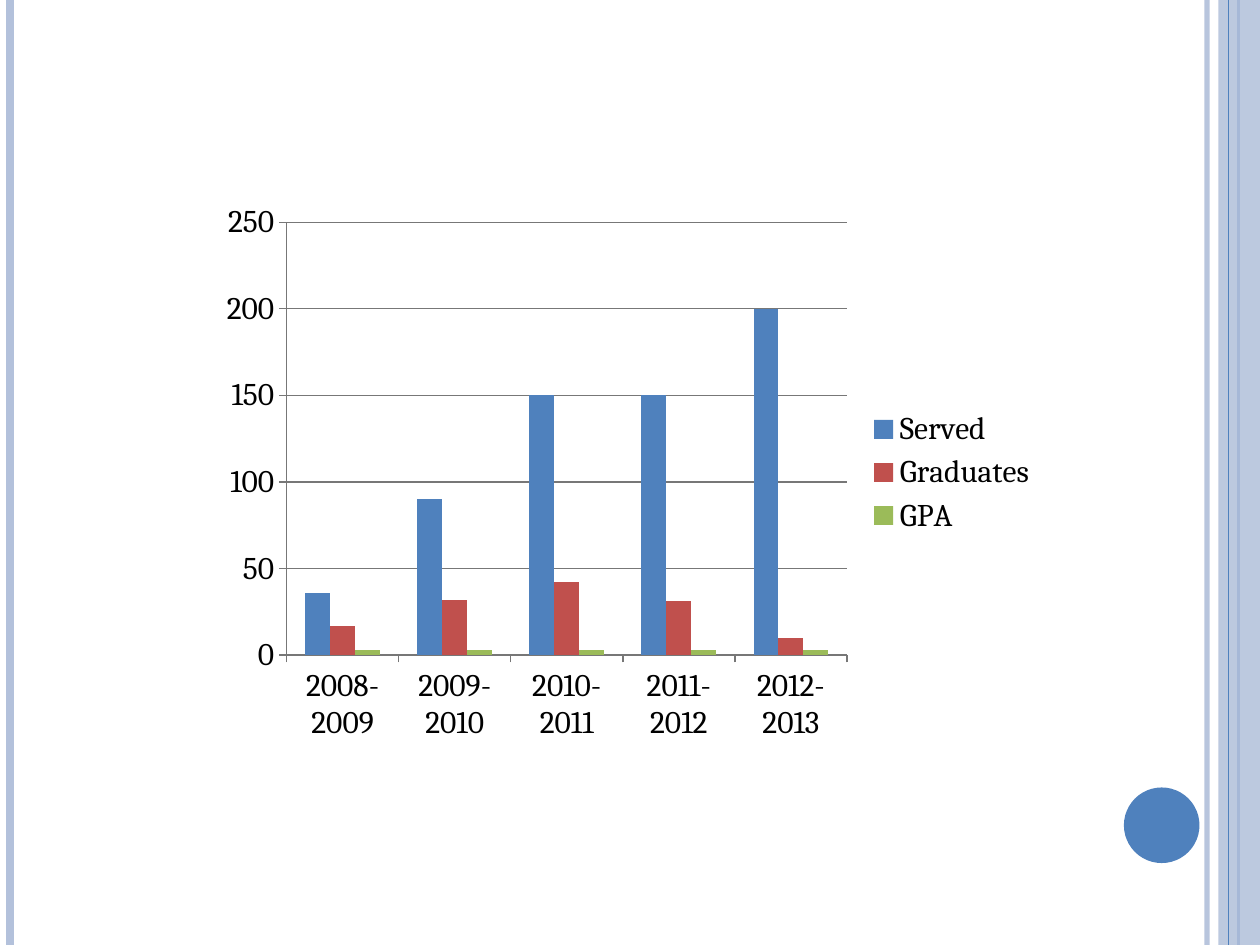
from lxml import etree
from pptx import Presentation
from pptx.chart.data import CategoryChartData
from pptx.dml.color import RGBColor
from pptx.enum.chart import XL_CHART_TYPE as ChartType, XL_LEGEND_POSITION as LegendSide
from pptx.enum.chart import XL_TICK_MARK as Tick
from pptx.enum.shapes import MSO_CONNECTOR as Connector, MSO_SHAPE as Shape
from pptx.oxml.ns import qn
from pptx.util import Inches, Pt

COLORS = {
    "background": "FFFFFF",
    "pale": "B3C1DB",
    "blue": "4F81BD",
    "red": "C0504D",
    "green": "9BBB59",
    "text": "000000",
    "axis": "777777",
}
FONT = "Cambria"
WIDTH, HEIGHT = 10, 7.5
YEARS = [f"{year}-{year + 1}" for year in range(2008, 2013)]
SERIES = [
    ("Served", (36, 90, 150, 150, 200), "blue"),
    ("Graduates", (17, 32, 42, 31, 10), "red"),
    ("GPA", (3, 3, 3, 3, 3), "green"),
]


def color(name):
    return RGBColor.from_string(COLORS[name])


def set_opacity(fill_parent, percent):
    tone = fill_parent.find(".//" + qn("a:srgbClr"))
    etree.SubElement(tone, qn("a:alpha")).set("val", str(percent * 1000))


def add_stripe(page, x, box, name, weight, opacity=100):
    left, top, width, height = box
    x = Inches(left + x * width)
    stripe = page.shapes.add_connector(
        Connector.STRAIGHT, x, Inches(top), x, Inches(top + height))
    stripe.line.color.rgb = color(name)
    stripe.line.width = Pt(weight)
    properties = stripe.line._get_or_add_ln().getparent()
    if opacity < 100:
        set_opacity(properties, opacity)
    etree.SubElement(properties, qn("a:effectLst"))


def add_solid(page, kind, box, name):
    solid = page.shapes.add_shape(kind, *map(Inches, box))
    solid.shadow.inherit = False
    solid.fill.solid()
    solid.fill.fore_color.rgb = color(name)
    solid.line.fill.background()
    return solid


def add_frame(page, box):
    left, top, width, height = box
    add_stripe(page, 0.958, box, "pale", 3, 93)
    add_stripe(page, 0.008, box, "pale", 4.5)
    add_stripe(page, 0.983, box, "blue", 1.5)
    band_box = (left + 0.967 * width, top, 0.033 * width, height)
    band = add_solid(page, Shape.RECTANGLE, band_box, "pale")
    set_opacity(band.fill._xPr, 87)
    add_stripe(page, 0.975, box, "blue", 0.75)
    disc = 0.06 * width
    disc_box = (left + 0.892 * width, top + height * 5 / 6, disc, disc)
    add_solid(page, Shape.OVAL, disc_box, "blue")


def add_student_chart(page, box):
    data = CategoryChartData()
    data.categories = YEARS
    for name, values, _ in SERIES:
        data.add_series(name, values)
    chart = page.shapes.add_chart(
        ChartType.COLUMN_CLUSTERED, *map(Inches, box), data).chart
    chart.has_title = False
    chart.font.name = FONT
    chart.font.size = Pt(18)
    chart.font.color.rgb = color("text")
    chart.has_legend = True
    chart.legend.position = LegendSide.RIGHT
    chart.legend.include_in_layout = False

    plot = chart.plots[0]
    plot.gap_width = 150
    plot.overlap = 0
    plot.vary_by_categories = False
    for series, (_, _, name) in zip(plot.series, SERIES):
        series.format.fill.solid()
        series.format.fill.fore_color.rgb = color(name)

    chart.value_axis.has_major_gridlines = True
    gridlines = chart.value_axis.major_gridlines
    for part in (chart.category_axis, chart.value_axis, gridlines):
        part.format.line.color.rgb = color("axis")
        part.format.line.width = Pt(0.75)
    for axis in (chart.category_axis, chart.value_axis):
        axis.major_tick_mark = Tick.OUTSIDE
        axis.minor_tick_mark = Tick.NONE


def main():
    deck = Presentation()
    deck.slide_width, deck.slide_height = Inches(WIDTH), Inches(HEIGHT)
    page = deck.slides.add_slide(deck.slide_layouts[6])
    page.background.fill.solid()
    page.background.fill.fore_color.rgb = color("background")
    add_frame(page, (0, 0, WIDTH, HEIGHT))
    chart_box = (WIDTH / 6, 0.204 * HEIGHT, WIDTH * 2 / 3, 0.592 * HEIGHT)
    add_student_chart(page, chart_box)
    deck.save("out.pptx")


if __name__ == "__main__":
    main()
